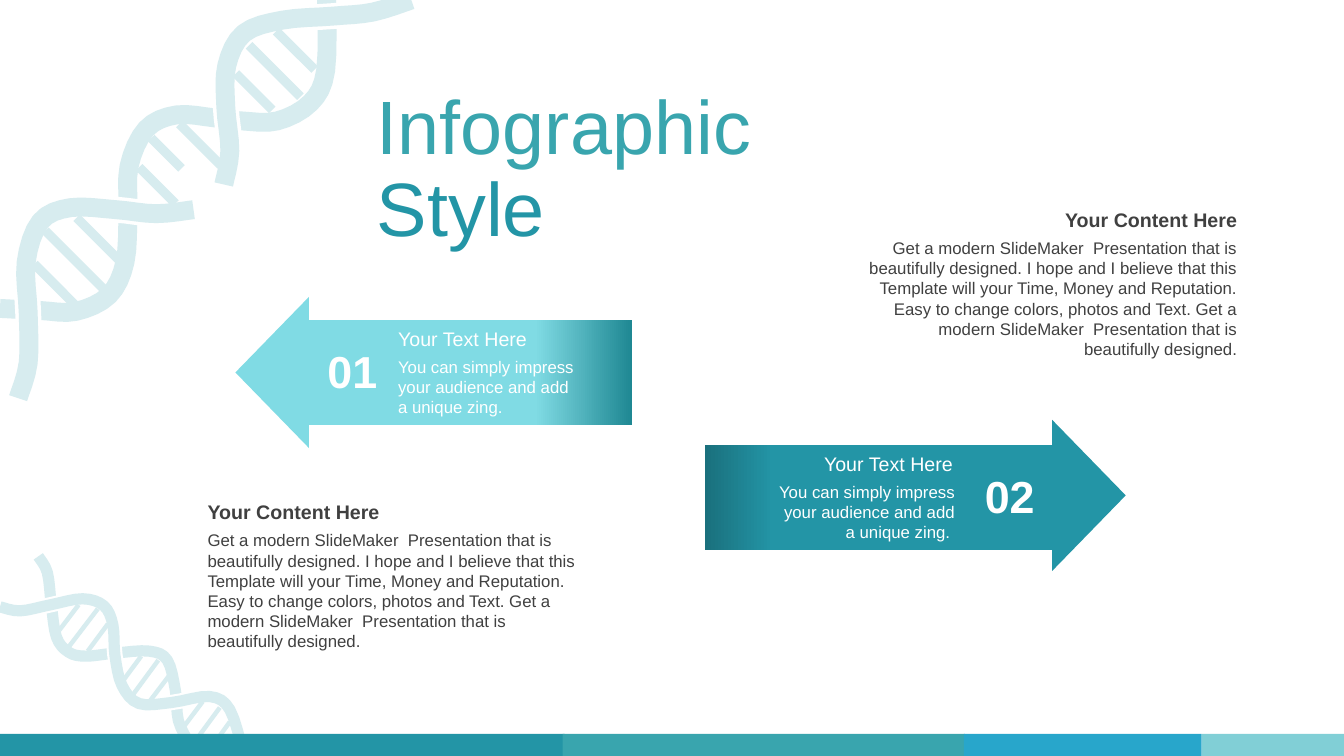
from pptx import Presentation
from pptx.dml.color import RGBColor
from pptx.enum.shapes import MSO_SHAPE
from pptx.enum.text import MSO_ANCHOR, PP_ALIGN
from pptx.util import Inches, Pt

LEFT, CENTER, RIGHT = PP_ALIGN.LEFT, PP_ALIGN.CENTER, PP_ALIGN.RIGHT
TOP, MIDDLE = MSO_ANCHOR.TOP, MSO_ANCHOR.MIDDLE
RECTANGLE, TRIANGLE = MSO_SHAPE.RECTANGLE, MSO_SHAPE.ISOSCELES_TRIANGLE

THEME = {
    "font": "Arial",
    "title": 54, "number": 32, "heading": 14, "body": 12,
    "white": RGBColor.from_string("FFFFFF"),
    "ink": RGBColor.from_string("404040"),
    "teal": RGBColor.from_string("2395A6"),
    "dark_teal": RGBColor.from_string("1A707D"),
    "green": RGBColor.from_string("39A5AE"),
    "blue": RGBColor.from_string("28A6CB"),
    "pale": RGBColor.from_string("81CFD6"),
    "aqua": RGBColor.from_string("80DBE4"),
    "dark_aqua": RGBColor.from_string("1F8893"),
    "helix": RGBColor.from_string("D7ECEF"),
}

deck = Presentation()
deck.slide_width, deck.slide_height = Inches(13.33), Inches(7.5)
page = deck.slides.add_slide(deck.slide_layouts[6])
shapes = page.shapes
CELL = deck.slide_height / 7.5  # square grid, 7.5 rows high


def add_text(lines, left, top, width, height, size="body", colors=("ink",),
             bold=False, align=LEFT, anchor=TOP, spacing=1.0):
    """Add a text box; each line after the first follows a line break."""
    box = shapes.add_textbox(*(round(n * CELL) for n in (left, top, width, height)))
    box.text_frame.word_wrap = True
    box.text_frame.vertical_anchor = anchor
    para = box.text_frame.paragraphs[0]
    para.alignment, para.line_spacing = align, spacing
    for index, (line, color) in enumerate(zip(lines, colors)):
        if index:
            para.add_line_break()
        span = para.add_run()
        span.text = line
        span.font.name, span.font.size = THEME["font"], Pt(THEME[size])
        span.font.bold, span.font.color.rgb = bold, THEME[color]


def add_strands(strands, width, color, steps=4):
    """Draw open lines through their knots as one shape (Catmull-Rom)."""
    builder = shapes.build_freeform(*(CELL * n for n in strands[0][0]))
    for index, knots in enumerate(strands):
        ends = [knots[0], *knots, knots[-1]]
        points = []
        for a, b, c, d in zip(ends, ends[1:], ends[2:], ends[3:]):
            for t in (step / steps for step in range(1, steps + 1)):
                points.append([CELL * (q + t * (r - p) / 2
                                       + t * t * (2 * p - 5 * q + 4 * r - s) / 2
                                       + t ** 3 * (3 * q - p - 3 * r + s) / 2)
                               for p, q, r, s in zip(a, b, c, d)])
        if index:
            builder.move_to(*(CELL * n for n in knots[0]))
        builder.add_line_segments(points, close=False)
    outline = builder.convert_to_shape()
    outline.shadow.inherit = False
    outline.fill.background()
    outline.line.width, outline.line.color.rgb = Pt(width), THEME[color]


# Helixes: a strand below, strands above with a white edge, and rungs
helixes = [
    {"width": 13.5, "edge": 5, "rung": 6.6,
     "below": [(0, 3.06), (0.39, 3.08), (0.75, 3.09), (1.08, 2.93), (1.24, 2.6),
               (1.27, 2.1), (1.28, 1.65), (1.45, 1.28), (1.75, 1.14), (2.13, 1.17),
               (2.4, 1.2), (2.75, 1.2), (3.08, 1.02), (3.23, 0.7), (3.24, 0)],
     "above": [[(0.18, 3.95), (0.28, 3.6), (0.28, 3.1), (0.26, 2.6), (0.4, 2.2),
                (0.7, 2.06), (1.15, 2.08), (1.55, 2.12), (1.92, 2.08)],
               [(2.22, 1.83), (2.28, 1.5), (2.24, 1.06), (2.25, 0.65), (2.42, 0.33),
                (2.8, 0.2), (3.3, 0.16), (3.7, 0.12), (4.08, 0)]],
     "rungs": [[(0.76, 2.16), (1.18, 2.58)], [(0.45, 2.29), (1.05, 2.89)],
               [(0.34, 2.62), (0.74, 3.02)], [(1.78, 1.23), (2.19, 1.64)],
               [(1.5, 1.37), (1.8, 1.67)], [(1.38, 1.66), (1.74, 2.02)],
               [(2.74, 0.31), (3.12, 0.69)], [(2.47, 0.45), (2.98, 0.96)],
               [(2.34, 0.73), (2.7, 1.09)]]},
    {"width": 8, "edge": 3, "rung": 3.2,
     "below": [(0.38, 5.52), (0.47, 5.68), (0.51, 6), (0.56, 6.32), (0.68, 6.47),
               (0.85, 6.51), (1.14, 6.48), (1.48, 6.46), (1.66, 6.55), (1.74, 6.85),
               (1.77, 7.15), (1.88, 7.38)],
     "above": [[(0, 6.02), (0.2, 6.06), (0.5, 6), (0.82, 5.94), (1.03, 6.01),
                (1.12, 6.2), (1.14, 6.5), (1.21, 6.8), (1.38, 6.98), (1.7, 6.97),
                (2.08, 6.91), (2.28, 7.04), (2.41, 7.45)]],
     "rungs": [[(0.78, 6), (0.59, 6.25)], [(0.97, 6.04), (0.68, 6.42)],
               [(1.07, 6.19), (0.87, 6.46)], [(1.4, 6.51), (1.23, 6.74)],
               [(1.57, 6.55), (1.32, 6.89)], [(1.68, 6.7), (1.49, 6.95)],
               [(2.01, 6.96), (1.83, 7.2)], [(2.18, 7.02), (1.93, 7.36)],
               [(2.28, 7.16), (2.1, 7.41)]]},
]
for helix in helixes:
    add_strands([helix["below"]], helix["width"], "helix")
    add_strands(helix["above"], helix["width"] + helix["edge"], "white")
    add_strands(helix["rungs"], helix["rung"], "helix", steps=1)
    add_strands(helix["above"], helix["width"], "helix")

# Footer bars and arrows: kind, place, rotation, colour, shaded end
blocks = [
    (RECTANGLE, (0, 7.28, 5.6, 0.25), 0, "teal", None),
    (RECTANGLE, (5.58, 7.28, 3.99, 0.25), 0, "green", None),
    (RECTANGLE, (9.56, 7.28, 2.36, 0.25), 0, "blue", None),
    (RECTANGLE, (11.92, 7.28, 1.41, 0.25), 0, "pale", None),
    (RECTANGLE, (6.99, 4.41, 3.6, 1.05), 0, "teal", ("dark_teal", 0.19, 0)),
    (TRIANGLE, (10.05, 4.55, 1.5, 0.73), 90, "teal", None),
    (RECTANGLE, (3.06, 3.17, 3.21, 1.05), 0, "aqua", ("dark_aqua", 0.3, 180)),
    (TRIANGLE, (1.95, 3.33, 1.5, 0.73), 270, "aqua", None),
]
for kind, place, rotation, color, shade in blocks:
    block = shapes.add_shape(kind, *(round(n * CELL) for n in place))
    block.rotation = rotation
    block.shadow.inherit = False
    block.line.fill.background()
    if shade:
        end_color, reach, angle = shade
        block.fill.gradient()
        block.fill.gradient_angle = angle
        first, last = block.fill.gradient_stops
        first.color.rgb, first.position = THEME[end_color], 0
        last.color.rgb, last.position = THEME[color], reach
    else:
        block.fill.solid()
        block.fill.fore_color.rgb = THEME[color]

# Title
add_text(["Infographic", "Style"], 3.64, 0.75, 4.36, 1.89, size="title",
         colors=("green", "teal"), anchor=MIDDLE, spacing=0.9)

# Arrow labels
slogan = "You can simply impress your audience and add a unique zing."
for number, number_left, left, top, align, text in (
        ("01", 3.09, 3.85, 3.19, LEFT, slogan),
        ("02", 9.61, 7.6, 4.43, RIGHT, slogan + " ")):
    add_text([number], number_left, top + 0.17, 0.81, 0.64, size="number",
             colors=("white",), bold=True, align=CENTER, anchor=MIDDLE)
    add_text([text], left, top + 0.3, 1.97, 0.71, colors=("white",), align=align)
    add_text(["Your Text Here"], left, top, 1.95, 0.34, size="heading",
             colors=("white",), align=align)

# Content paragraphs
content = ("Get a modern SlideMaker  Presentation that is beautifully designed. "
           "I hope and I believe that this Template will your Time, Money and "
           "Reputation. Easy to change colors, photos and Text. Get a modern "
           "SlideMaker  Presentation that is beautifully designed.")
for left, top, width, align in ((1.96, 4.91, 3.89, LEFT), (8.43, 2.01, 3.94, RIGHT)):
    add_text([content], left, top + 0.3, width, 1.31, align=align)
    add_text(["Your Content Here"], left, top, width, 0.34, size="heading",
             bold=True, align=align)

deck.save("out.pptx")
